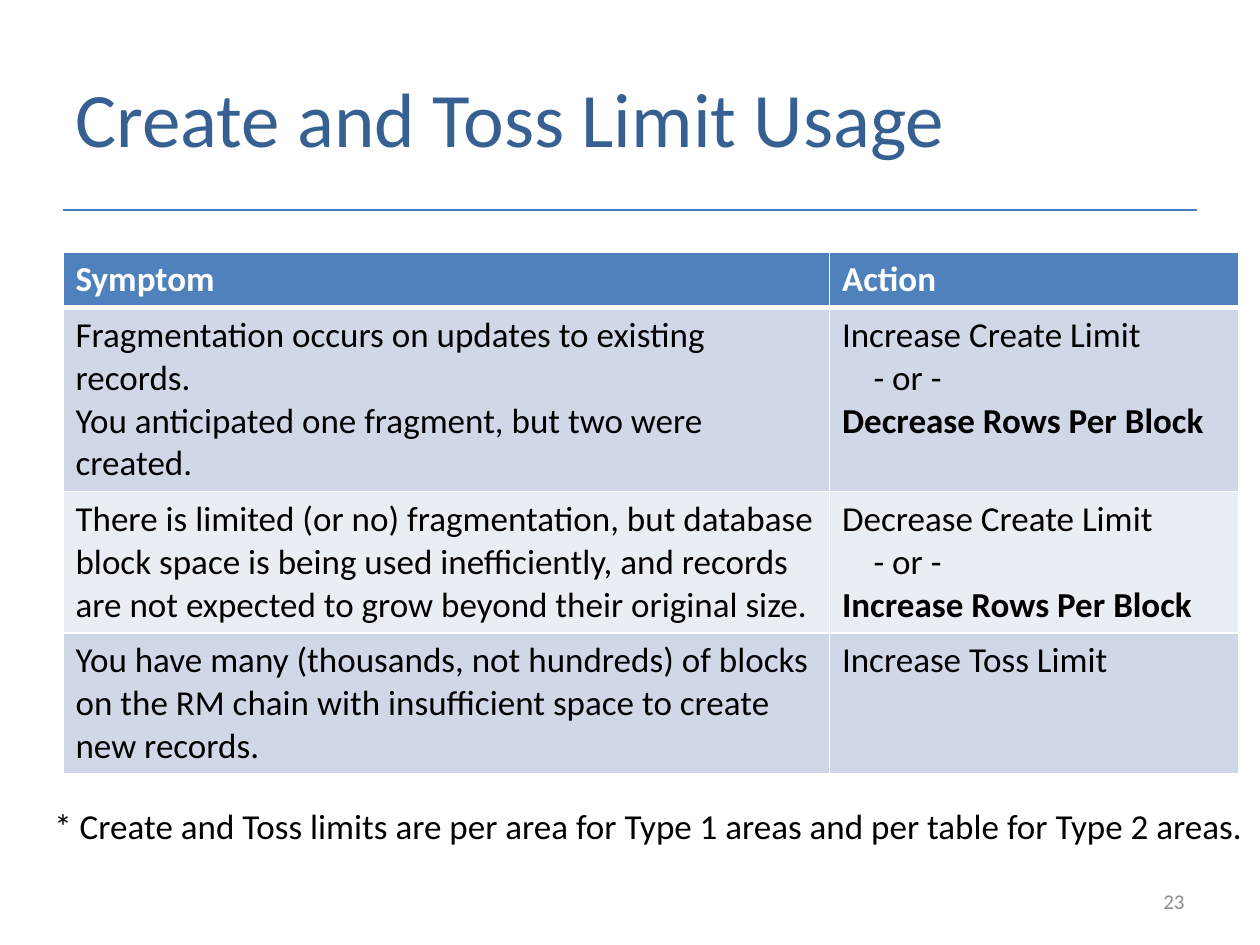
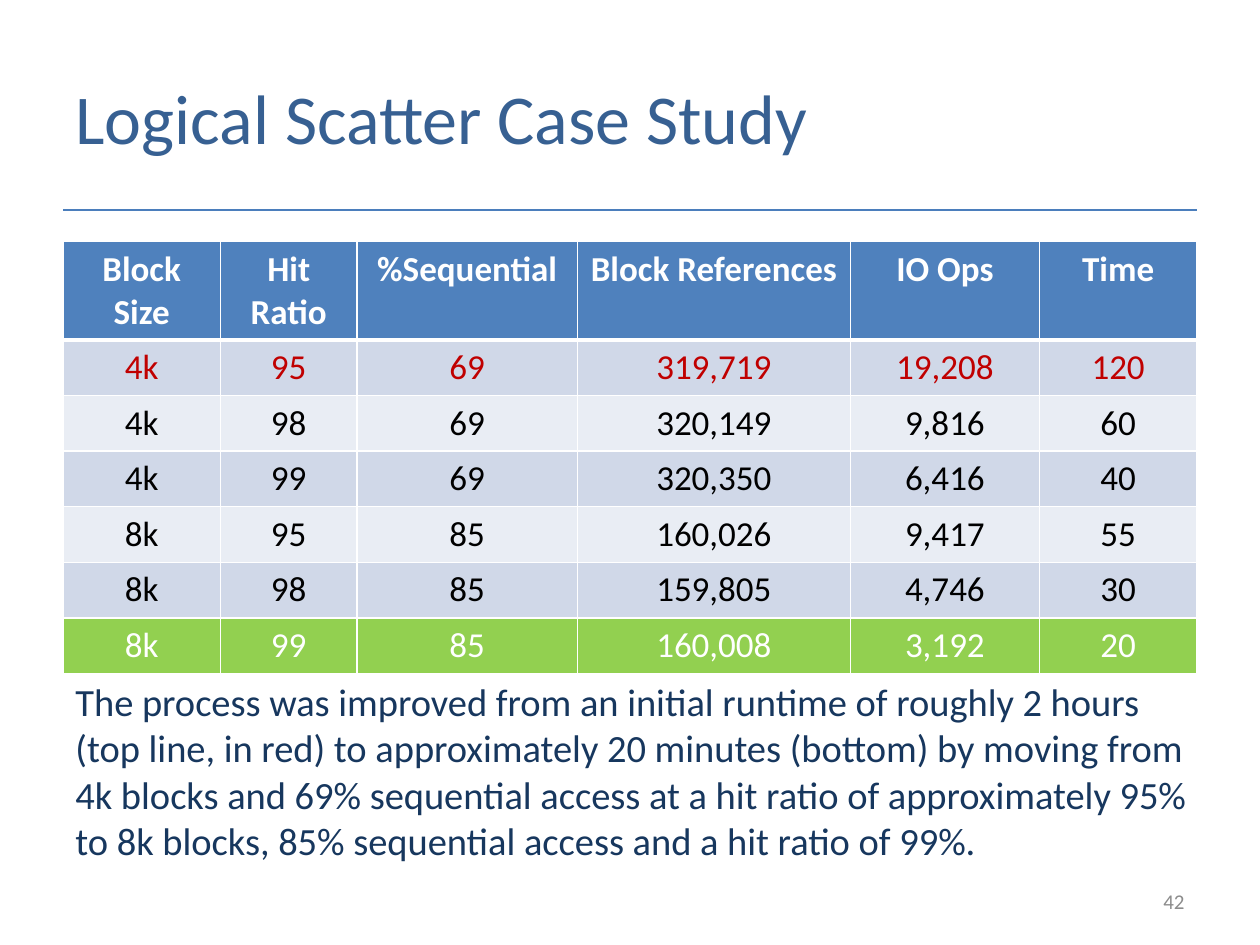
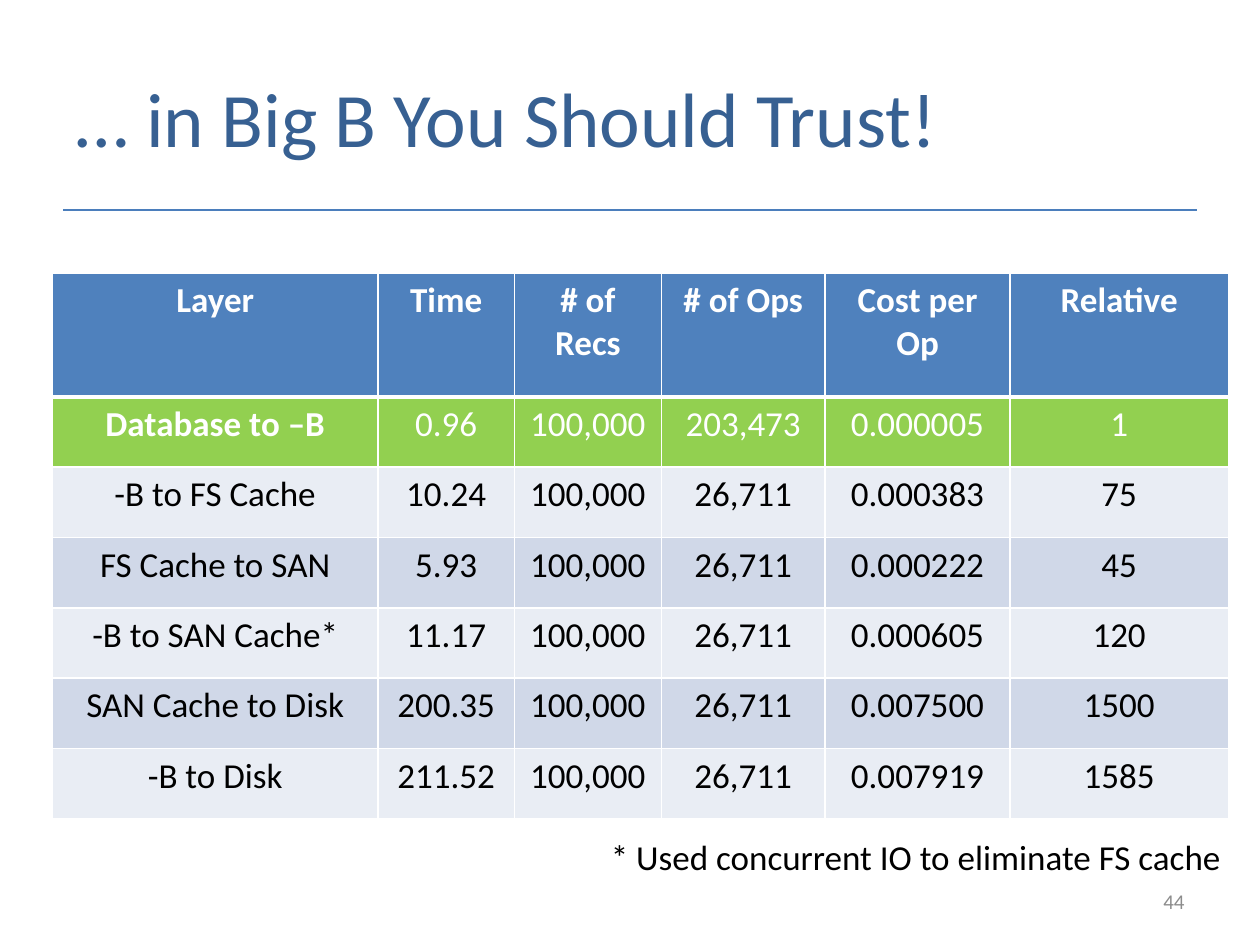
from pptx import Presentation
from pptx.dml.color import RGBColor
from pptx.enum.shapes import MSO_CONNECTOR as Link
from pptx.enum.text import MSO_ANCHOR as Anchor, MSO_AUTO_SIZE as Auto, PP_ALIGN as Align
from pptx.util import Inches, Pt
from lxml.etree import SubElement as Sub
from pptx.oxml.ns import qn

# Shared look
FONT = "Calibri"
WHITE = RGBColor(0xFF, 0xFF, 0xFF)
BLACK = RGBColor(0x00, 0x00, 0x00)
BLUE = RGBColor(0x37, 0x60, 0x92)
NAVY = RGBColor(0x17, 0x37, 0x5E)
RULE = RGBColor(0x4B, 0x7E, 0xBC)
HEAD = RGBColor(0x4F, 0x81, 0xBD)
DARK = RGBColor(0xD0, 0xD8, 0xE8)
PALE = RGBColor(0xE9, 0xED, 0xF4)
GREEN = RGBColor(0x92, 0xD0, 0x50)
RED = RGBColor(0xC0, 0x00, 0x00)
GRAY = RGBColor(0x8C, 0x8C, 0x8C)

deck = Presentation()
deck.slide_width, deck.slide_height = Inches(10), Inches(7.5)
UNIT = deck.slide_width / 120  # grid of 120 columns by 90 rows


def grid(*nums):
    return [round(num * UNIT) for num in nums]


def write(para, text, size, ink, bold=False, align=Align.LEFT):
    para.alignment = align
    run = para.add_run()
    run.text = text
    font = run.font
    font.name, font.size, font.bold = FONT, Pt(size), bold
    font.color.rgb = ink


# Lines set in bold, and the line set in from the left
STRONG = {"Decrease Rows Per Block", "Increase Rows Per Block", "Database to –B"}
INSET = "- or -"

# Table places are left and top; marks give a row its own fill and ink
PAGES = [
    {
        "title": "Create and Toss Limit Usage", "size": 44, "num": "23",
        "place": (6, 24), "align": Align.LEFT, "marks": {},
        "cols": [73, 39], "rows": [5.3, 17.5, 13.4, 13.4],
        "data": [
            ["Symptom", "Action"],
            ["Fragmentation occurs on updates to existing records.\n"
             "You anticipated one fragment, but two were created.",
             "Increase Create Limit\n- or -\nDecrease Rows Per Block"],
            ["There is limited (or no) fragmentation, but database block space "
             "is being used inefficiently, and records are not expected to grow "
             "beyond their original size.",
             "Decrease Create Limit\n- or -\nIncrease Rows Per Block"],
            ["You have many (thousands, not hundreds) of blocks on the RM chain "
             "with insufficient space to create new records.",
             "Increase Toss Limit"],
        ],
        "note": "* Create and Toss limits are per area for Type 1 areas "
                "and per table for Type 2 areas.",
        "box": (4, 76, 116, 5.3), "wrap": False, "style": (20, BLACK),
    },
    {
        "title": "Logical Scatter Case Study", "size": 40, "num": "42",
        "place": (6, 23), "align": Align.CENTER,
        "marks": {1: (DARK, RED), 6: (GREEN, WHITE)},
        "cols": [15, 13, 21, 26, 18, 15], "rows": [9.3] + [5.3] * 6,
        "data": [
            ["Block Size", "Hit Ratio", "%Sequential", "Block References", "IO Ops", "Time"],
            ["4k", "95", "69", "319,719", "19,208", "120"],
            ["4k", "98", "69", "320,149", "9,816", "60"],
            ["4k", "99", "69", "320,350", "6,416", "40"],
            ["8k", "95", "85", "160,026", "9,417", "55"],
            ["8k", "98", "85", "159,805", "4,746", "30"],
            ["8k", "99", "85", "160,008", "3,192", "20"],
        ],
        "note": "The process was improved from an initial runtime of roughly 2 hours "
                "(top line, in red) to approximately 20 minutes (bottom) by moving "
                "from 4k blocks and 69% sequential access at a hit ratio of "
                "approximately 95% to 8k blocks, 85% sequential access and a hit "
                "ratio of 99%.",
        "box": (6, 64, 110, 19), "wrap": True, "style": (22, NAVY),
    },
    {
        "title": "… in Big B You Should Trust!", "size": 44, "num": "44",
        "place": (5, 26), "align": Align.CENTER, "marks": {1: (GREEN, WHITE)},
        "cols": [31, 13, 14, 15.6, 17.6, 20.8], "rows": [11.8] + [6.7] * 6,
        "data": [
            ["Layer", "Time", "# of Recs", "# of Ops", "Cost per Op", "Relative"],
            ["Database to –B", "0.96", "100,000", "203,473", "0.000005", "1"],
            ["-B to FS Cache", "10.24", "100,000", "26,711", "0.000383", "75"],
            ["FS Cache to SAN", "5.93", "100,000", "26,711", "0.000222", "45"],
            ["-B to SAN Cache*", "11.17", "100,000", "26,711", "0.000605", "120"],
            ["SAN Cache to Disk", "200.35", "100,000", "26,711", "0.007500", "1500"],
            ["-B to Disk", "211.52", "100,000", "26,711", "0.007919", "1585"],
        ],
        "note": "* Used concurrent IO to eliminate FS cache",
        "box": (57, 79, 61, 5.3), "wrap": False, "style": (20, BLACK),
    },
]

for page in PAGES:
    slide = deck.slides.add_slide(deck.slide_layouts[5])
    shapes = slide.shapes

    # Title
    title = shapes.title
    title.left, title.top, title.width, title.height = grid(6, 3.6, 94, 15)
    frame = title.text_frame
    frame.auto_size, frame.vertical_anchor = Auto.NONE, Anchor.MIDDLE
    write(frame.paragraphs[0], page["title"], page["size"], BLUE)

    # Rule below the title
    rule = shapes.add_connector(Link.STRAIGHT, *grid(6, 20, 114, 20))
    rule.line.color.rgb, rule.line.width = RULE, Pt(1.5)
    Sub(rule._element.spPr, qn("a:effectLst"))

    # Table
    data, cols, rows = page["data"], page["cols"], page["rows"]
    area = grid(*page["place"], sum(cols), sum(rows))
    table = shapes.add_table(len(rows), len(cols), *area).table
    table.horz_banding = False
    for col, wide in zip(table.columns, grid(*cols)):
        col.width = wide
    for row, high in zip(table.rows, grid(*rows)):
        row.height = high

    for r, line in enumerate(data):
        fill, ink = (HEAD, WHITE) if r == 0 else (DARK if r % 2 else PALE, BLACK)
        fill, ink = page["marks"].get(r, (fill, ink))
        for c, text in enumerate(line):
            cell = table.cell(r, c)
            # White borders, thick below the head row
            props = cell._tc.get_or_add_tcPr()
            for side in "LRTB":
                thick = (r, side) in [(0, "B"), (1, "T")]
                edge = Sub(props, qn("a:ln" + side), w=str(Pt(3 if thick else 1)))
                paint = Sub(edge, qn("a:solidFill"))
                Sub(paint, qn("a:srgbClr"), val=str(WHITE))
            cell.fill.solid()
            cell.fill.fore_color.rgb = fill
            # One paragraph for each line
            frame = cell.text_frame
            for i, part in enumerate(text.split("\n")):
                para = frame.add_paragraph() if i else frame.paragraphs[0]
                if part == INSET:
                    para._p.get_or_add_pPr().set("marL", str(Inches(0.25)))
                write(para, part, 20, ink, r == 0 or part in STRONG, page["align"])

    # Note below the table
    frame = shapes.add_textbox(*grid(*page["box"])).text_frame
    frame.word_wrap = page["wrap"]
    frame.auto_size = Auto.SHAPE_TO_FIT_TEXT
    write(frame.paragraphs[0], page["note"], *page["style"])

    # Page number
    frame = shapes.add_textbox(*grid(108, 83.4, 6, 4.8)).text_frame
    frame.word_wrap, frame.vertical_anchor = True, Anchor.MIDDLE
    write(frame.paragraphs[0], page["num"], 12, GRAY, align=Align.RIGHT)

deck.save("out.pptx")
